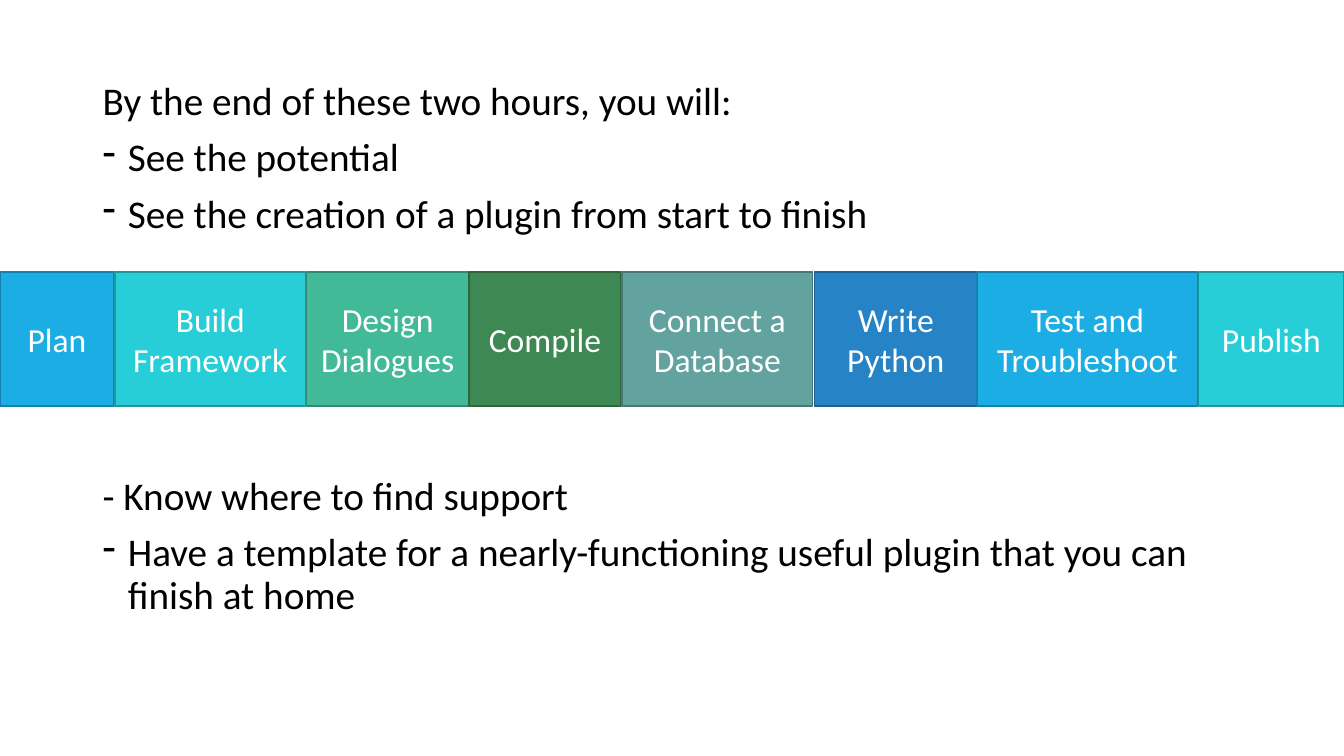
from lxml import etree
from pptx import Presentation
from pptx.dml.color import RGBColor
from pptx.enum.shapes import MSO_SHAPE
from pptx.enum.text import MSO_ANCHOR, PP_ALIGN
from pptx.oxml.ns import qn
from pptx.util import Inches, Pt

RECTANGLE = MSO_SHAPE.RECTANGLE
MIDDLE = MSO_ANCHOR.MIDDLE
CENTER = PP_ALIGN.CENTER
FONT = "Calibri"
COLORS = {
    "black": "000000", "white": "FFFFFF",
    "blue": "1CADE4", "blue edge": "1580A9",
    "cyan": "27CED7", "cyan edge": "1D989F",
    "mint": "42BA97", "mint edge": "318A70",
    "green": "3E8853", "green edge": "2E653D",
    "sage": "62A39F", "sage edge": "497976",
    "navy": "2683C6", "navy edge": "1C6192",
}


def color(name):
    return RGBColor.from_string(COLORS[name])


def style(paragraph, size, color_name):
    paragraph.font.name = FONT
    paragraph.font.size = Pt(size)
    paragraph.font.color.rgb = color(color_name)


deck = Presentation()
deck.slide_width = Inches(13.33)
deck.slide_height = Inches(7.5)
page = deck.slides.add_slide(deck.slide_layouts[6])

# Goals above and below the band: top, height, (text, bulleted)
goal_blocks = [
    (0.76, 1.8, [
        ("By the end of these two hours, you will:", False),
        ("See the potential", True),
        ("See the creation of a plugin from start to finish", True),
    ]),
    (4.68, 2.07, [
        ("- Know where to find support", False),
        ("Have a template for a nearly-functioning useful plugin "
         "that you can finish at home", True),
    ]),
]
for top, height, goals in goal_blocks:
    box = page.shapes.add_textbox(
        Inches(0.92), Inches(top), Inches(11.5), Inches(height))
    frame = box.text_frame
    frame.word_wrap = True
    for index, (text, bulleted) in enumerate(goals):
        paragraph = frame.add_paragraph() if index else frame.paragraphs[0]
        paragraph.text = text
        paragraph.line_spacing = 0.9
        paragraph.space_before = Pt(10)
        style(paragraph, 28, "black")
        if bulleted:
            properties = paragraph._p.get_or_add_pPr()
            properties.set("marL", str(Inches(0.25)))
            properties.set("indent", str(-Inches(0.25)))
            bullet = etree.Element(qn("a:buChar"), char="-")
            properties.find(qn("a:defRPr")).addprevious(bullet)

# Band of workshop steps: text, left, width, color
steps = [
    ("Plan", 0, 1.13, "blue"),
    ("Build Framework", 1.14, 1.89, "cyan"),
    ("Design Dialogues", 3.04, 1.61, "mint"),
    ("Compile", 4.65, 1.51, "green"),
    ("Connect a Database", 6.17, 1.89, "sage"),
    ("Write Python", 8.08, 1.61, "navy"),
    ("Test and Troubleshoot", 9.69, 2.19, "blue"),
    ("Publish", 11.89, 1.44, "cyan"),
]
for text, left, width, fill in steps:
    step = page.shapes.add_shape(
        RECTANGLE, Inches(left), Inches(2.7), Inches(width), Inches(1.33))
    step.shadow.inherit = False
    step.fill.solid()
    step.fill.fore_color.rgb = color(fill)
    step.line.color.rgb = color(fill + " edge")
    step.line.width = Pt(1)
    step.text_frame.word_wrap = True
    step.text_frame.vertical_anchor = MIDDLE
    paragraph = step.text_frame.paragraphs[0]
    paragraph.text = text
    paragraph.alignment = CENTER
    style(paragraph, 24, "white")

deck.save("out.pptx")
